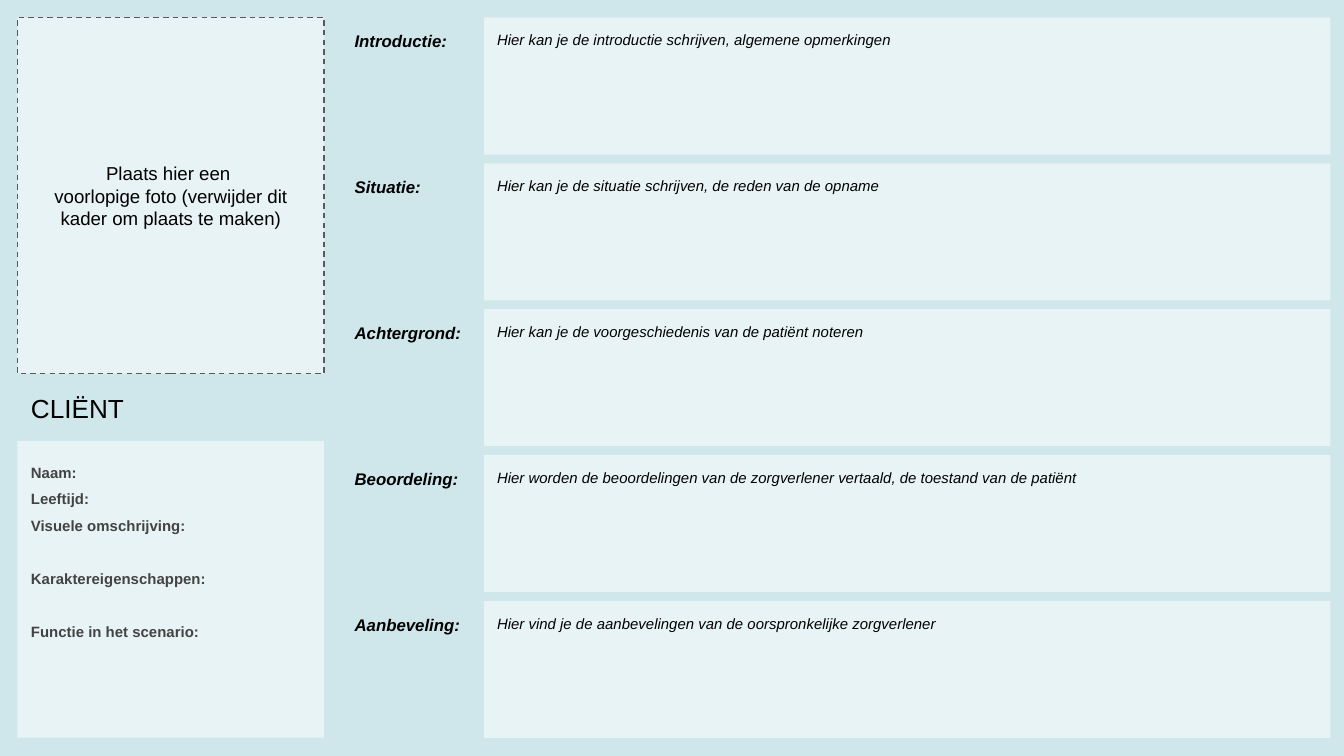
from dataclasses import dataclass

from lxml import etree
from pptx import Presentation
from pptx.dml.color import RGBColor
from pptx.enum import dml, shapes, text
from pptx.oxml import ns
from pptx.util import Inches, Pt


@dataclass(frozen=True)
class Theme:
    font: str = "Arial"
    background: str = "CFE6EB"
    panel: str = "FFFFFF"
    panel_opacity: int = 53
    border: str = "595959"
    ink: str = "000000"
    field_ink: str = "434343"
    title_size: int = 14
    photo_size: int = 10
    label_size: int = 9
    body_size: int = 8


THEME = Theme()
SLIDE_WIDTH = 10
SLIDE_HEIGHT = SLIDE_WIDTH * 9 / 16
MARGIN, BOTTOM = 0.13, 5.49
CLIENT_WIDTH = 2.28
ROW_HEIGHT = 1.02

# Each section: label and hint
SECTIONS = [
    ("Introductie:", "Hier kan je de introductie schrijven, algemene opmerkingen"),
    ("Situatie:", "Hier kan je de situatie schrijven, de reden van de opname"),
    ("Achtergrond:", "Hier kan je de voorgeschiedenis van de patiënt noteren"),
    ("Beoordeling:", "Hier worden de beoordelingen van de zorgverlener vertaald, "
                     "de toestand van de patiënt"),
    ("Aanbeveling:", "Hier vind je de aanbevelingen van de oorspronkelijke zorgverlener"),
]

# Each client field: label and space before it in points
CLIENT_FIELDS = [
    ("Naam:", 0),
    ("Leeftijd:", 0),
    ("Visuele omschrijving:", 0),
    ("Karaktereigenschappen:", 14),
    ("Functie in het scenario:", 14),
]


def place(shape, left, top, width, height):
    shape.left, shape.top = Inches(left), Inches(top)
    shape.width, shape.height = Inches(width), Inches(height)


def fill_panel(shape):
    """Give a shape the translucent white of all panels."""
    shape.fill.solid()
    shape.fill.fore_color.rgb = RGBColor.from_string(THEME.panel)
    color = shape.fill._xPr.find(".//" + ns.qn("a:srgbClr"))
    etree.SubElement(color, ns.qn("a:alpha"), val=str(THEME.panel_opacity * 1000))


def write(shape, lines, size, color=THEME.ink, bold=False, italic=False,
          align=text.PP_ALIGN.LEFT, anchor=text.MSO_ANCHOR.TOP, inset=0.1):
    frame = shape.text_frame
    frame.word_wrap = True
    frame.auto_size = text.MSO_AUTO_SIZE.NONE
    frame.vertical_anchor = anchor
    frame.margin_left = frame.margin_right = Inches(0.1)
    frame.margin_top = frame.margin_bottom = Inches(inset)
    frame.text = "\n".join(lines)
    for paragraph in frame.paragraphs:
        paragraph.alignment = align
        font = paragraph.font
        font.name, font.size = THEME.font, Pt(size)
        font.bold, font.italic = bold, italic
        font.color.rgb = RGBColor.from_string(color)


def add_panel(slide, left, top, width, height):
    panel = slide.shapes.add_shape(
        shapes.MSO_SHAPE.RECTANGLE,
        Inches(left), Inches(top), Inches(width), Inches(height))
    panel.shadow.inherit = False
    fill_panel(panel)
    panel.line.fill.background()
    return panel


def add_photo_frame(slide):
    photo = add_panel(slide, MARGIN, MARGIN, CLIENT_WIDTH, 2.65)
    photo.line.color.rgb = RGBColor.from_string(THEME.border)
    photo.line.width = Pt(0.75)
    photo.line.dash_style = dml.MSO_LINE.DASH
    write(photo,
          ["Plaats hier een ",
           "voorlopige foto (verwijder dit kader om plaats te maken)"],
          THEME.photo_size, align=text.PP_ALIGN.CENTER,
          anchor=text.MSO_ANCHOR.MIDDLE)


def fill_title(slide):
    title = slide.shapes.title
    place(title, MARGIN, 2.87, CLIENT_WIDTH, 0.34)
    write(title, ["CLIËNT"], THEME.title_size, inset=0.05)


def fill_client_fields(slide):
    fields = slide.placeholders[1]
    top = 3.28
    place(fields, MARGIN, top, CLIENT_WIDTH, BOTTOM - top)
    fill_panel(fields)
    write(fields, [label for label, _ in CLIENT_FIELDS], THEME.body_size,
          color=THEME.field_ink, bold=True)
    for paragraph, (_, gap) in zip(fields.text_frame.paragraphs, CLIENT_FIELDS):
        paragraph.line_spacing = 1.5
        paragraph.space_before = Pt(gap)
        # Plain lines without bullet or indent
        properties = paragraph._p.get_or_add_pPr()
        properties.set("marL", "0")
        properties.set("indent", "0")
        bullet = etree.Element(ns.qn("a:buNone"))
        properties.find(ns.qn("a:defRPr")).addprevious(bullet)


def add_section(slide, top, label, hint):
    label_box = slide.shapes.add_textbox(
        Inches(2.54), Inches(top), Inches(1.03), Inches(ROW_HEIGHT))
    write(label_box, [label], THEME.label_size, bold=True, italic=True)
    hint_panel = add_panel(slide, 3.6, top, 6.3, ROW_HEIGHT)
    write(hint_panel, [hint], THEME.body_size, italic=True)


def main():
    deck = Presentation()
    deck.slide_width, deck.slide_height = Inches(SLIDE_WIDTH), Inches(SLIDE_HEIGHT)
    slide = deck.slides.add_slide(deck.slide_layouts[1])
    slide.background.fill.solid()
    slide.background.fill.fore_color.rgb = RGBColor.from_string(THEME.background)

    # Client column
    add_photo_frame(slide)
    fill_title(slide)
    fill_client_fields(slide)

    # Report sections, spread evenly between the margins
    pitch = (BOTTOM - MARGIN - ROW_HEIGHT) / (len(SECTIONS) - 1)
    for row, (label, hint) in enumerate(SECTIONS):
        add_section(slide, MARGIN + row * pitch, label, hint)

    deck.save("out.pptx")


if __name__ == "__main__":
    main()
